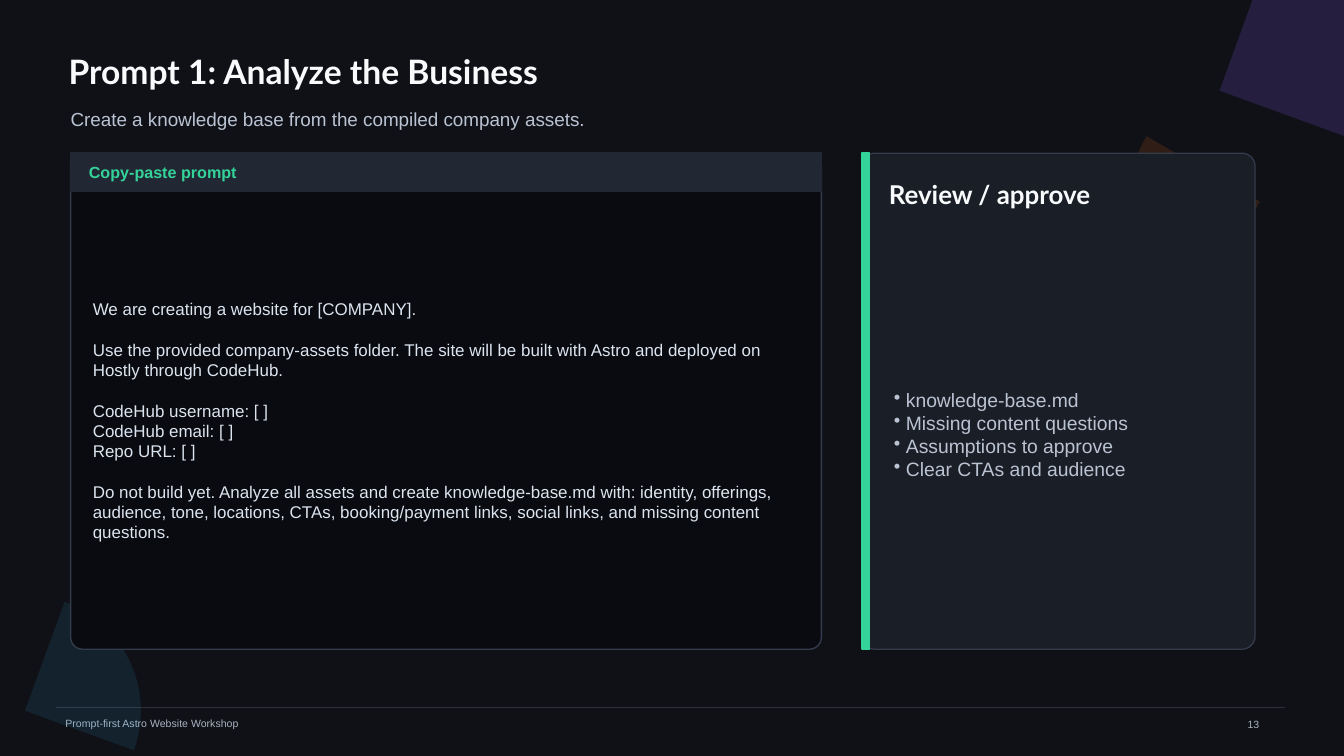
"""Build the workshop slide with the business-analysis prompt and its review list."""
from lxml.etree import SubElement
from pptx import Presentation
from pptx.dml.color import RGBColor
from pptx.enum.shapes import MSO_CONNECTOR, MSO_SHAPE as Shape
from pptx.enum.text import MSO_ANCHOR as Anchor
from pptx.oxml.ns import qn
from pptx.util import Cm, Pt

BACKGROUND = RGBColor(0x0F, 0x11, 0x17)
RULE = RGBColor(0x2B, 0x30, 0x3B)
BORDER = RGBColor(0x34, 0x3B, 0x4A)
PROMPT_FILL = RGBColor(0x09, 0x0B, 0x10)
HEADER_FILL = RGBColor(0x22, 0x27, 0x34)
REVIEW_FILL = RGBColor(0x1A, 0x1E, 0x27)
GREEN = RGBColor(0x34, 0xD3, 0x99)
VIOLET = RGBColor(0x8B, 0x5C, 0xF6)
ORANGE = RGBColor(0xF9, 0x73, 0x16)
BLUE = RGBColor(0x38, 0xBD, 0xF8)
WHITE = RGBColor(0xF8, 0xFA, 0xFC)
SOFT = RGBColor(0xBA, 0xC3, 0xD2)
PROMPT_TEXT = RGBColor(0xDC, 0xE4, 0xF0)
FOOTER = RGBColor(0xAA, 0xB3, 0xC1)

PROMPT = [
    ["We are creating a website for [COMPANY]."],
    ["Use the provided company-assets folder. The site will be built with Astro "
     "and deployed on Hostly through CodeHub."],
    ["CodeHub username: [ ]", "CodeHub email: [ ]", "Repo URL: [ ]"],
    ["Do not build yet. Analyze all assets and create knowledge-base.md with: "
     "identity, offerings, audience, tone, locations, CTAs, booking/payment links, "
     "social links, and missing content questions."],
]
REVIEW = ["knowledge-base.md", "Missing content questions",
          "Assumptions to approve", "Clear CTAs and audience"]
PANEL_TOP, PANEL_HEIGHT = 3.86, 12.5
PROMPT_LEFT, PROMPT_WIDTH = 1.78, 18.92
REVIEW_LEFT, REVIEW_WIDTH = 21.72, 9.91


class Deck:
    """Hold the fonts and the current slide; all lengths are in centimetres."""

    heading_font, body_font = "Lato", "Arial"

    def __init__(self):
        self.presentation = Presentation()
        self.presentation.slide_width = Cm(33.87)
        self.presentation.slide_height = Cm(19.05)
        self.slide = self.presentation.slides.add_slide(self.presentation.slide_layouts[6])
        self.slide.background.fill.solid()
        self.slide.background.fill.fore_color.rgb = BACKGROUND

    def rule(self, left, right, y, color, width):
        line = self.slide.shapes.add_connector(
            MSO_CONNECTOR.STRAIGHT, Cm(left), Cm(y), Cm(right), Cm(y))
        line.line.color.rgb = color
        line.line.width = Pt(width)
        SubElement(line._element.spPr, qn("a:effectLst"))

    def shape(self, kind, box, fill, border=None, width=1, corner=None):
        shape = self.slide.shapes.add_shape(kind, *map(Cm, box))
        shape.shadow.inherit = False
        shape.fill.solid()
        shape.fill.fore_color.rgb = fill
        if border is None:
            shape.line.fill.background()
        else:
            shape.line.color.rgb = border
            shape.line.width = Pt(width)
        if corner is not None:
            shape.adjustments[0] = corner
        return shape

    def wedge(self, left, top, size, rotation, color, opacity):
        wedge = self.shape(Shape.ARC, (left, top, size, size), color)
        wedge.rotation = rotation
        tint = wedge.fill._xPr.find(qn("a:solidFill"))[0]
        SubElement(tint, qn("a:alpha"), val=str(opacity * 1000))

    def text(self, groups, box, size, color, font=None, bold=False, gap=0,
             bullet=False, anchor=Anchor.MIDDLE, insets=(0, 0)):
        """Write groups of paragraphs, with a gap in points between groups."""
        frame = self.slide.shapes.add_textbox(*map(Cm, box)).text_frame
        frame.word_wrap = True
        frame.vertical_anchor = anchor
        frame.margin_left = frame.margin_right = Cm(insets[0])
        frame.margin_top = frame.margin_bottom = Cm(insets[1])
        groups = [[groups]] if isinstance(groups, str) else groups
        lines = [(line, number > 0 and line is group[0])
                 for number, group in enumerate(groups) for line in group]
        for number, (line, spaced) in enumerate(lines):
            paragraph = frame.add_paragraph() if number else frame.paragraphs[0]
            if spaced:
                paragraph.space_before = Pt(gap)
            if bullet:
                properties = paragraph._p.get_or_add_pPr()
                properties.set("marL", str(Cm(0.3)))
                properties.set("indent", str(-Cm(0.3)))
                SubElement(properties, qn("a:buChar"), char="•")
            run = paragraph.add_run()
            run.text = line
            run.font.name = font or self.body_font
            run.font.size = Pt(size)
            run.font.bold = bold
            run.font.color.rgb = color

    def save(self):
        self.presentation.save("out.pptx")


def main():
    deck = Deck()
    deck.rule(1.4, 32.39, 17.83, RULE, 0.75)
    deck.text("Prompt-first Astro Website Workshop", (1.65, 17.98, 13.97, 0.51), 7.5, FOOTER)
    deck.wedge(25.91, -2.54, 9.65, 20, VIOLET, 18)
    deck.wedge(28.45, 1.78, 6.6, 210, ORANGE, 14)
    deck.wedge(-2.29, 14.99, 5.84, 20, BLUE, 10)

    deck.text("Prompt 1: Analyze the Business", (1.73, 1.14, 26.92, 1.32), 24, WHITE,
              font=deck.heading_font, bold=True)
    deck.text("Create a knowledge base from the compiled company assets.",
              (1.78, 2.64, 26.92, 0.69), 13.5, SOFT)

    deck.shape(Shape.ROUNDED_RECTANGLE, (PROMPT_LEFT, PANEL_TOP, PROMPT_WIDTH, PANEL_HEIGHT),
               PROMPT_FILL, BORDER, corner=0.024)
    deck.shape(Shape.RECTANGLE, (PROMPT_LEFT, PANEL_TOP, PROMPT_WIDTH, 0.97),
               HEADER_FILL, HEADER_FILL)
    deck.text("Copy-paste prompt", (2.24, 4.17, 18.01, 0.33), 11.5, GREEN, bold=True)
    deck.text(PROMPT, (2.34, 5.26, 17.81, 10.67), 12.1, PROMPT_TEXT, gap=14.5)

    deck.shape(Shape.ROUNDED_RECTANGLE, (REVIEW_LEFT, PANEL_TOP, REVIEW_WIDTH, PANEL_HEIGHT),
               REVIEW_FILL, BORDER, width=0.9, corner=0.033)
    deck.shape(Shape.RECTANGLE, (REVIEW_LEFT, PANEL_TOP, 0.2, PANEL_HEIGHT), GREEN, GREEN)
    deck.text("Review / approve", (22.4, 4.55, 8.69, 0.71), 18.5, WHITE,
              font=deck.heading_font, bold=True)
    deck.text([REVIEW], (22.53, 5.94, 8.51, 10.01), 13.8, SOFT, bullet=True)

    deck.text("13", (31.19, 17.96, 2.21, 0.84), 7.5, FOOTER,
              anchor=Anchor.TOP, insets=(0.25, 0.13))
    deck.save()


if __name__ == "__main__":
    main()
